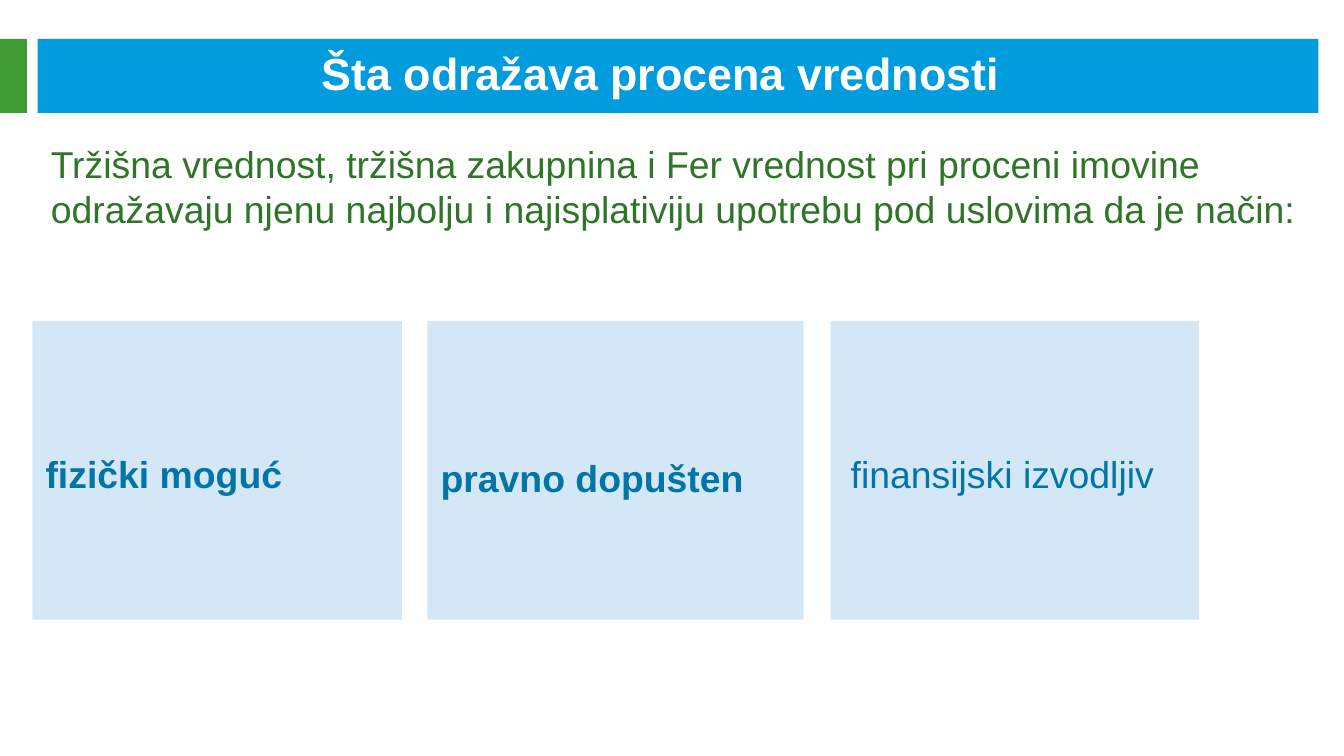
"""Build the slide on what a property valuation reflects."""
from pptx import Presentation
from pptx.dml.color import RGBColor
from pptx.enum.shapes import MSO_SHAPE
from pptx.enum.text import MSO_ANCHOR, PP_ALIGN
from pptx.util import Inches, Pt

RECTANGLE = MSO_SHAPE.RECTANGLE
TOP, MIDDLE = MSO_ANCHOR.TOP, MSO_ANCHOR.MIDDLE
LEFT, CENTER = PP_ALIGN.LEFT, PP_ALIGN.CENTER


def add_rectangle(left, top, width, height, color):
    shape = slide.shapes.add_shape(
        RECTANGLE, Inches(left), Inches(top), Inches(width), Inches(height))
    shape.shadow.inherit = False
    shape.fill.solid()
    shape.fill.fore_color.rgb = RGBColor.from_string(color)
    shape.line.fill.background()
    return shape


def write_text(shape, text, color, size=20, bold=False, align=LEFT, anchor=MIDDLE,
               line_spacing=1.0, space_after=0, margin_left=0.1, margin_top=0.05):
    frame = shape.text_frame
    frame.word_wrap = True
    frame.vertical_anchor = anchor
    frame.margin_left = Inches(margin_left)
    frame.margin_top = Inches(margin_top)
    paragraph = frame.paragraphs[0]
    paragraph.alignment = align
    paragraph.line_spacing = line_spacing
    paragraph.space_after = Pt(space_after)
    run = paragraph.add_run()
    run.text = text
    run.font.name = "Arial"
    run.font.size = Pt(size)
    run.font.bold = bold
    run.font.color.rgb = RGBColor.from_string(color)


presentation = Presentation()
presentation.slide_width = Inches(10)
presentation.slide_height = Inches(10 * 9 / 16)
slide = presentation.slides.add_slide(presentation.slide_layouts[6])

add_rectangle(0.28, 0.29, 9.53, 0.55, "009CDE")
add_rectangle(0, 0.29, 0.2, 0.55, "3F9C35")

title = slide.shapes.add_textbox(Inches(0.28), Inches(0.39), Inches(9.36), Inches(0.3))
write_text(title, "Šta odražava procena vrednosti ", "FFFFFF",
           size=24, bold=True, align=CENTER)

introduction = slide.shapes.add_textbox(Inches(0.28), Inches(1), Inches(9.53), Inches(1.19))
write_text(introduction,
           "Tržišna vrednost, tržišna zakupnina i Fer vrednost pri proceni imovine "
           "odražavaju njenu najbolju i najisplativiju upotrebu pod uslovima da je način:",
           "2F7528", anchor=TOP)

conditions = [
    (0.24, 2.75, "fizički moguć",
     {"bold": True, "line_spacing": 1.15, "space_after": 10}),
    (3.18, 2.8, "pravno dopušten", {"bold": True, "margin_top": 0.16}),
    (6.18, 2.74, "finansijski izvodljiv",
     {"line_spacing": 1.15, "space_after": 10, "margin_left": 0.15}),
]
for left, width, text, text_format in conditions:
    card = add_rectangle(left, 2.39, width, 2.22, "D4E7F7")
    write_text(card, text, "0075A6", **text_format)

presentation.save("out.pptx")
